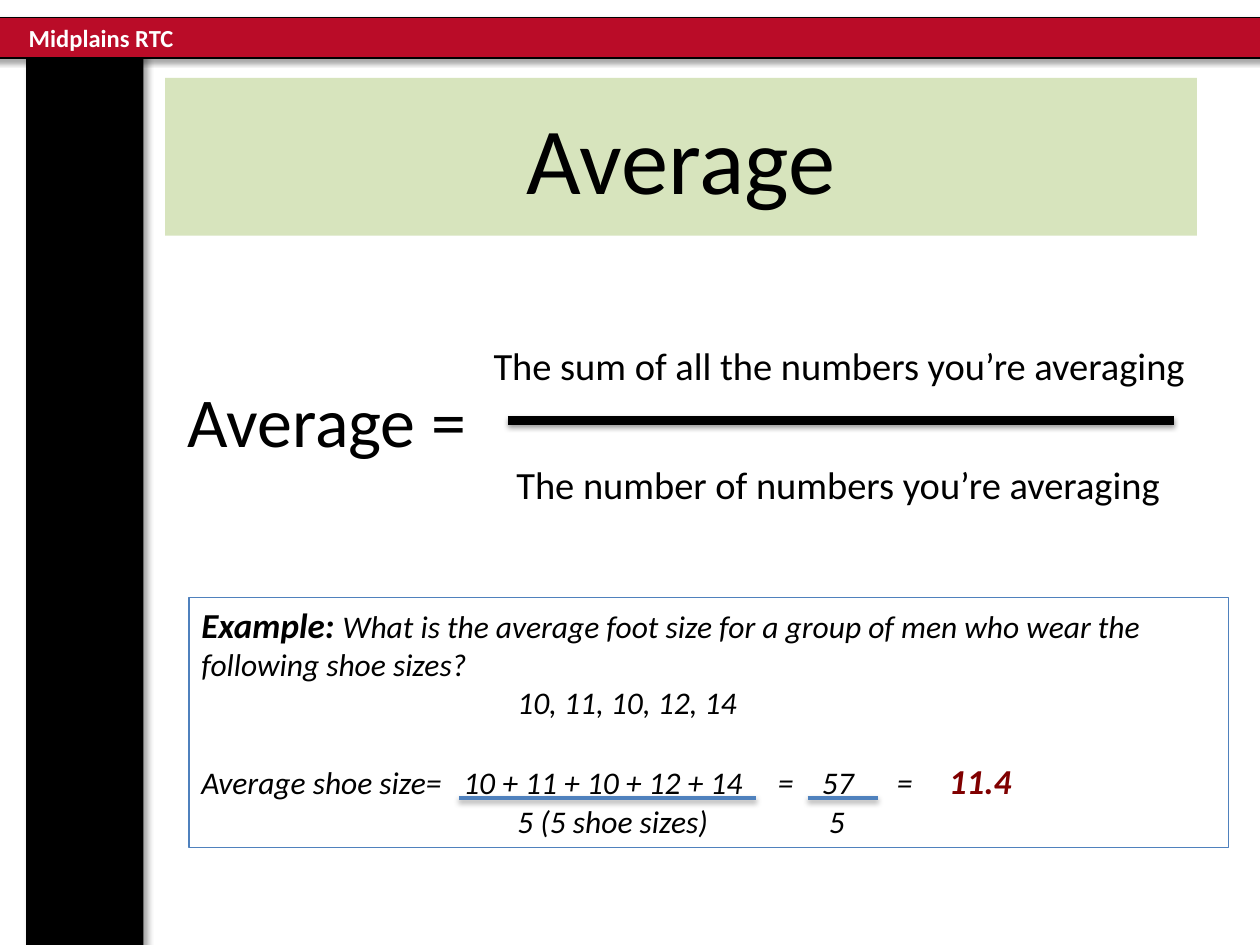
from dataclasses import dataclass

from lxml.etree import SubElement
from pptx import Presentation
from pptx.dml.color import RGBColor as Rgb
from pptx.enum.shapes import MSO_CONNECTOR as Link, MSO_SHAPE as Kind
from pptx.enum.text import MSO_ANCHOR as Anchor, PP_ALIGN as Align
from pptx.oxml.ns import qn
from pptx.util import Cm, Pt


@dataclass(frozen=True)
class Theme:
    """Colours, font and type sizes of the slide."""
    font: str = "Calibri"
    ink: str = "000000"
    paper: str = "FFFFFF"
    red: str = "BA0C28"
    green: str = "D7E4BD"
    blue: str = "4F81BD"
    maroon: str = "800000"
    title: int = 54
    term: int = 40
    ratio: int = 22
    lead: int = 20
    body: int = 18
    label: int = 14


THEME = Theme()
RULE_SHADE = (38, 3.1, 1.6, 90)


def place(box, left, top, wide, high):
    """Turn a place inside a box into slide lengths."""
    return Cm(box[0] + left), Cm(box[1] + top), Cm(wide), Cm(high)


def shade(shape, alpha, blur, dist, angle):
    """Give a shape an outer shadow."""
    props = shape._element.spPr
    effects = props.find(qn("a:effectLst"))
    if effects is None:
        effects = SubElement(props, qn("a:effectLst"))
    outer = SubElement(effects, qn("a:outerShdw"), blurRad=str(Pt(blur)),
                       dist=str(Pt(dist)), dir=str(angle * 60000), rotWithShape="0")
    color = SubElement(outer, qn("a:srgbClr"), val=THEME.ink)
    SubElement(color, qn("a:alpha"), val=str(alpha * 1000))


def panel(slide, spot, fill=None, edge=None):
    """Draw a rectangle with an optional fill and outline."""
    shape = slide.shapes.add_shape(Kind.RECTANGLE, *spot)
    shape.shadow.inherit = False
    for paint, color in ((shape.fill, fill), (shape.line.fill, edge)):
        if color:
            paint.solid()
            paint.fore_color.rgb = Rgb.from_string(color)
        else:
            paint.background()
    if edge:
        shape.line.width = Pt(0.75)
    return shape


def write(para, text, size, color=THEME.ink, **form):
    """Add a formatted run to a paragraph."""
    run = para.add_run()
    run.text = text
    for key, value in {"name": THEME.font, "size": Pt(size), **form}.items():
        setattr(run.font, key, value)
    run.font.color.rgb = Rgb.from_string(color)


def note(slide, spot, text, size, wrap=True, **form):
    """Add a text box holding one run."""
    frame = slide.shapes.add_textbox(*spot).text_frame
    frame.word_wrap = wrap
    write(frame.paragraphs[0], text, size, **form)


def rule(slide, box, start, end, top, color, width):
    """Draw a shadowed level line inside a box."""
    left, level, wide, _ = place(box, start, top, end - start, 0)
    line = slide.shapes.add_connector(Link.STRAIGHT, left, level, left + wide, level)
    line.line.color.rgb = Rgb.from_string(color)
    line.line.width = Pt(width)
    shade(line, *RULE_SHADE)


def stops(para, *marks):
    """Set the left tab stops of a paragraph."""
    tabs = SubElement(para._p.get_or_add_pPr(), qn("a:tabLst"))
    for mark in marks:
        SubElement(tabs, qn("a:tab"), pos=str(Cm(mark)), algn="l")


def frame_page(slide, box):
    """Place the side bar, top band and its label."""
    bar = panel(slide, place(box, 0.53, 0.76, 2.36, 18.64), THEME.ink)
    shade(bar, 40, 4, 3, 45)
    band = panel(slide, place(box, -0.33, 0.36, 26.29, 0.81), THEME.red, THEME.ink)
    shade(band, 35, 3.1, 1.8, 90)
    note(slide, place(box, 0.33, 0.33, 3.61, 0.86), "Midplains RTC",
         THEME.label, False, color=THEME.paper, bold=True)


def head(slide, box):
    """Place the title panel."""
    frame = panel(slide, place(box, 0, 0, *box[2:]), THEME.green).text_frame
    frame.word_wrap = True
    frame.vertical_anchor = Anchor.MIDDLE
    frame.paragraphs[0].alignment = Align.CENTER
    write(frame.paragraphs[0], "Average", THEME.title)


def formula(slide, box):
    """Place the definition as a fraction."""
    note(slide, place(box, 0, 0.71, 6.15, 1.96), "Average =", THEME.term)
    for left, top, text in (
        (6.17, 0, "The sum of all the numbers you’re averaging"),
        (6.63, 2.39, "The number of numbers you’re averaging"),
    ):
        note(slide, place(box, left, top, 15.44, 1.19), text, THEME.ratio)
    rule(slide, box, 6.71, 20.14, 1.7, THEME.ink, 4.75)


def example(slide, box):
    """Place the worked example with its two fraction lines."""
    frame = panel(slide, place(box, 0, 0, *box[2:]), edge=THEME.blue).text_frame
    frame.word_wrap = True
    frame.vertical_anchor = Anchor.TOP
    ask = frame.paragraphs[0]
    data, total, count = (frame.add_paragraph() for _ in range(3))
    for para in frame.paragraphs:
        para.alignment = Align.LEFT
    total.space_before = Pt(22)
    stops(data, 6.37)
    stops(total, 5.28, 11.62, 12.51, 14.02, 15.07)
    stops(count, 6.37, 12.65)
    for para, text, strong, color in (
        (ask, "Example: ", True, THEME.ink),
        (ask, "What is the average foot size for a group of men who wear "
              "the following shoe sizes?", False, THEME.ink),
        (data, "\t10, 11, 10, 12, 14", False, THEME.ink),
        (total, "Average shoe size=\t10 + 11 + 10 + 12 + 14\t=\t57\t=\t",
         False, THEME.ink),
        (total, "11.4", True, THEME.maroon),
        (count, "\t5 (5 shoe sizes)\t5", False, THEME.ink),
    ):
        size = THEME.lead if strong else THEME.body
        write(para, text, size, color, bold=strong, italic=True)
    for start, end in ((5.44, 11.43), (12.47, 13.89)):
        rule(slide, box, start, end, 4.05, THEME.blue, 2)


def main():
    """Build and save the slide."""
    deck = Presentation()
    deck.slide_width, deck.slide_height = Cm(25.4), Cm(19.05)
    slide = deck.slides.add_slide(deck.slide_layouts[6])
    frame_page(slide, (0, 0, 25.4, 19.05))
    head(slide, (3.33, 1.57, 20.8, 3.18))
    formula(slide, (3.53, 6.78, 21.61, 3.58))
    example(slide, (3.81, 12.04, 20.96, 5.05))
    deck.save("out.pptx")


if __name__ == "__main__":
    main()
